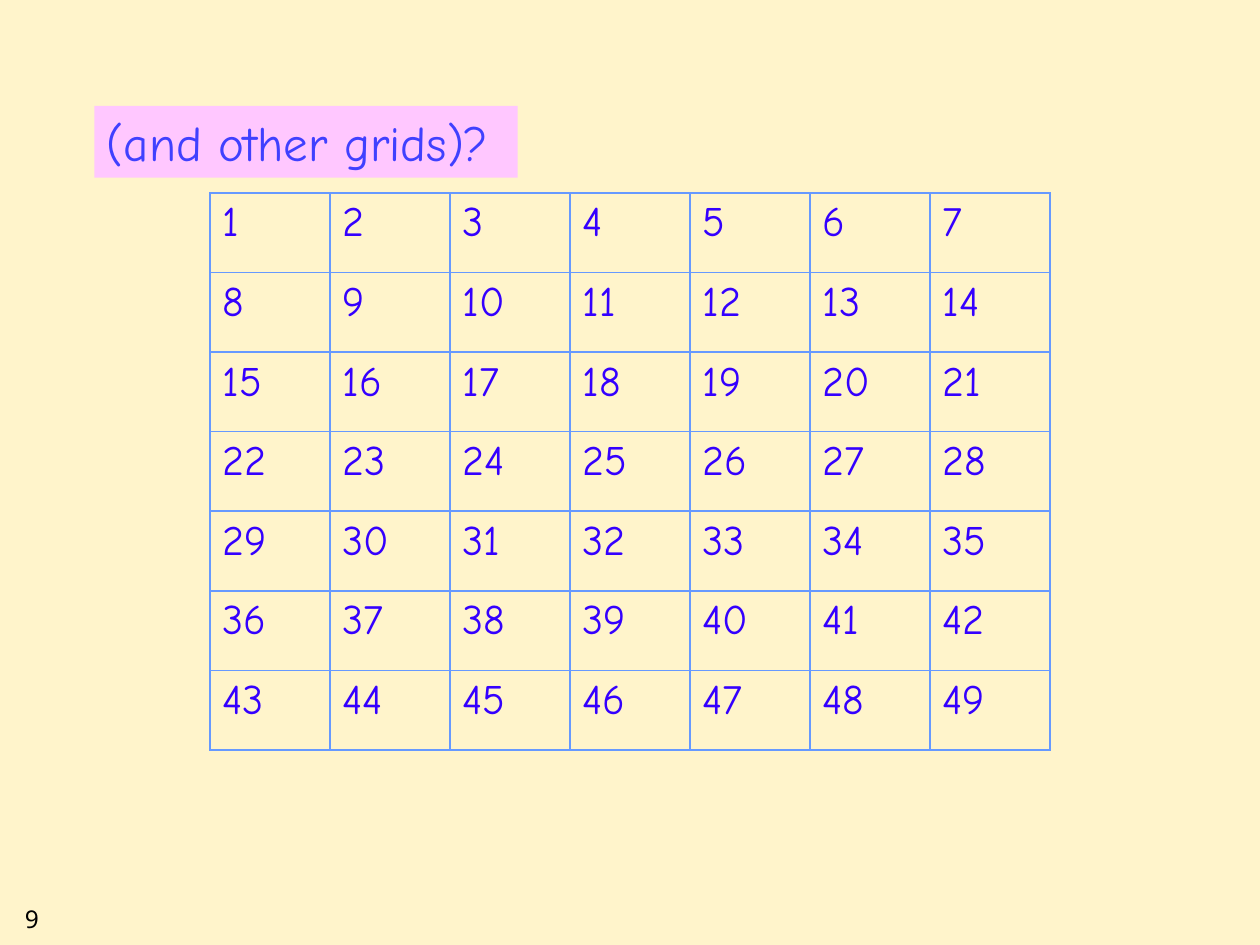
from lxml.etree import SubElement
from pptx import Presentation
from pptx.dml.color import RGBColor
from pptx.enum.shapes import MSO_SHAPE
from pptx.enum.text import PP_ALIGN, MSO_ANCHOR
from pptx.oxml.ns import qn
from pptx.util import Inches, Pt

COLUMNS, ROWS = 7, 7


def color(hex_code):
    return RGBColor.from_string(hex_code)


class GridSlide:
    font = "Comic Neue"
    number_font = "Noto Sans"
    paper, paper_opacity = "FFF2C0", 82
    title_fill, title_ink = "FFC7FF", "4040FF"
    grid_ink, grid_line = "3400FF", "6699FF"

    def __init__(self, deck):
        self.width, self.height = deck.slide_width, deck.slide_height
        self.slide = deck.slides.add_slide(deck.slide_layouts[6])
        paper = self.slide.background.fill
        paper.solid()
        paper.fore_color.rgb = color(self.paper)
        tint = self.slide.element.find(".//" + qn("p:bg") + "//" + qn("a:srgbClr"))
        SubElement(tint, qn("a:alpha"), val=str(self.paper_opacity * 1000))

    def box(self, left, top, width, height):
        """Turn shares of the slide into lengths."""
        return (round(left * self.width), round(top * self.height),
                round(width * self.width), round(height * self.height))

    def set_text(self, frame, text, size, ink, font):
        frame.text = text
        frame.word_wrap = True
        paragraph = frame.paragraphs[0]
        paragraph.alignment = PP_ALIGN.LEFT
        style = paragraph.runs[0].font
        style.name, style.size = font, Pt(size)
        style.color.rgb = color(ink)

    def title(self, text, *shares):
        banner = self.slide.shapes.add_shape(MSO_SHAPE.RECTANGLE, *self.box(*shares))
        banner.shadow.inherit = False
        banner.fill.solid()
        banner.fill.fore_color.rgb = color(self.title_fill)
        banner.line.fill.background()
        banner.text_frame.vertical_anchor = MSO_ANCHOR.TOP
        self.set_text(banner.text_frame, text, 28, self.title_ink, self.font)

    def page_number(self, text, *shares):
        label = self.slide.shapes.add_textbox(*self.box(*shares))
        self.set_text(label.text_frame, text, 14, "000000", self.number_font)

    def outline(self, cell):
        properties = cell._tc.get_or_add_tcPr()
        for position, side in enumerate(("a:lnL", "a:lnR", "a:lnT", "a:lnB")):
            line = properties.makeelement(qn(side), {"w": str(Pt(1))})
            fill = SubElement(line, qn("a:solidFill"))
            SubElement(fill, qn("a:srgbClr"), val=self.grid_line)
            properties.insert(position, line)

    def number_grid(self, columns, rows, *shares):
        frame = self.slide.shapes.add_table(rows, columns, *self.box(*shares))
        table = frame.table
        table.first_row = table.horz_banding = False
        for index, cell in enumerate(table.iter_cells(), start=1):
            cell.fill.background()
            self.outline(cell)
            self.set_text(cell.text_frame, str(index), 24, self.grid_ink, self.font)


def main():
    deck = Presentation()
    deck.slide_width, deck.slide_height = Inches(10), Inches(7.5)
    page = GridSlide(deck)

    # Page number in the lower left corner
    page.page_number("9", 0.01, 0.95, 0.08, 0.05)
    # Heading on its pink banner
    page.title("(and other grids)?", 0.075, 0.112, 0.336, 0.076)
    # Counting grid, centred across the slide
    page.number_grid(COLUMNS, ROWS, 1 / 6, 0.204, 2 / 3, 0.59)

    deck.save("out.pptx")


if __name__ == "__main__":
    main()
